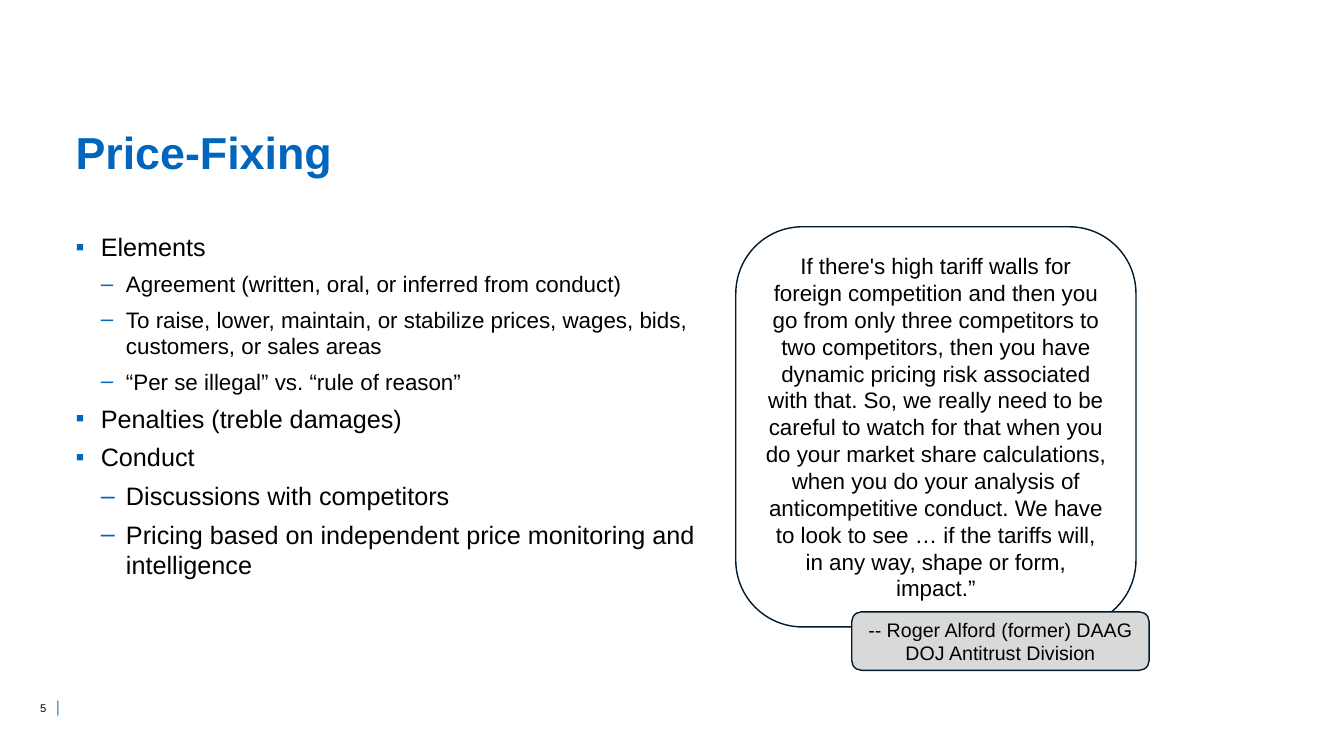
from dataclasses import dataclass

import pptx
import pptx.dml.color
import pptx.enum.shapes
import pptx.enum.text
import pptx.oxml
import pptx.oxml.ns
import pptx.util

Pt = pptx.util.Pt
Anchor = pptx.enum.text.MSO_ANCHOR
Align = pptx.enum.text.PP_ALIGN
Preset = pptx.enum.shapes.MSO_SHAPE

FONT = "Arial"
BLUE, BLACK, NAVY, GREY = "0066BD", "000000", "00192B", "D9D9D9"
INDENT = 18
BULLETS = ("▪", "–")


@dataclass
class Box:
    left: float
    top: float
    width: float
    height: float

    def lengths(self) -> list:
        return [Pt(value) for value in (self.left, self.top, self.width, self.height)]


@dataclass
class Point:
    text: str
    level: int
    size: float


@dataclass
class Callout:
    box: Box
    lines: list[str]
    size: float
    fill: str | None


TITLE_BOX = Box(54, 46.8, 741.6, 84.24)
BODY_BOX = Box(54, 162, 462.24, 311.76)
NUMBER_BOX = Box(11.52, 500.4, 21.6, 10.8)
NUMBER_RULE = Box(41.04, 500.4, 0.72, 10.8)

POINTS = [
    Point("Elements", 0, 18),
    Point("Agreement (written, oral, or inferred from conduct)", 1, 16),
    Point("To raise, lower, maintain, or stabilize prices, wages, bids, "
          "customers, or sales areas", 1, 16),
    Point("“Per se illegal” vs. “rule of reason”", 1, 16),
    Point("Penalties (treble damages)", 0, 18),
    Point("Conduct", 0, 18),
    Point("Discussions with competitors", 1, 18),
    Point("Pricing based on independent price monitoring and intelligence", 1, 18),
]

QUOTE = (
    "If there's high tariff walls for foreign competition and then you go from only "
    "three competitors to two competitors, then you have dynamic pricing risk "
    "associated with that. So, we really need to be careful to watch for that when "
    "you do your market share calculations, when you do your analysis of "
    "anticompetitive conduct. We have to look to see … if the tariffs will, in any "
    "way, shape or form, impact.”"
)
CALLOUTS = [
    Callout(Box(525.6, 162, 285.84, 285.84), [QUOTE], 16, None),
    Callout(Box(608.4, 437.04, 212.4, 41.76),
            ["-- Roger Alford (former) DAAG", "DOJ Antitrust Division"], 14, GREY),
]


def color(value: str) -> pptx.dml.color.RGBColor:
    return pptx.dml.color.RGBColor.from_string(value)


def style(paragraph, size: float, font_color: str, bold: bool = False) -> None:
    paragraph.font.name = FONT
    paragraph.font.size = Pt(size)
    paragraph.font.bold = bold
    paragraph.font.color.rgb = color(font_color)


def add_text_box(slide, box: Box, anchor, inset: float, wrap: bool = True):
    frame = slide.shapes.add_textbox(*box.lengths()).text_frame
    frame.word_wrap = wrap
    frame.vertical_anchor = anchor
    frame.margin_left = frame.margin_right = 0
    frame.margin_top = frame.margin_bottom = Pt(inset)
    return frame


def add_bullet(paragraph, level: int) -> None:
    properties = paragraph._p.get_or_add_pPr()
    properties.set("marL", str(Pt(INDENT * (level + 1))))
    properties.set("indent", str(-Pt(INDENT)))
    namespace = pptx.oxml.ns.nsdecls("a")
    for element in (
        f'<a:buClr {namespace}><a:srgbClr val="{BLUE}"/></a:buClr>',
        f'<a:buFont {namespace} typeface="{FONT}"/>',
        f'<a:buChar {namespace} char="{BULLETS[level]}"/>',
    ):
        properties.append(pptx.oxml.parse_xml(element))


def add_points(slide, box: Box, points: list[Point]) -> None:
    frame = add_text_box(slide, box, Anchor.TOP, 3.6)
    for index, point in enumerate(points):
        paragraph = frame.add_paragraph() if index else frame.paragraphs[0]
        paragraph.text = point.text
        paragraph.level = point.level
        paragraph.space_after = Pt(6)
        add_bullet(paragraph, point.level)
        style(paragraph, point.size, BLACK)


def add_callout(slide, callout: Callout) -> None:
    shape = slide.shapes.add_shape(Preset.ROUNDED_RECTANGLE, *callout.box.lengths())
    shape.shadow.inherit = False
    if callout.fill:
        shape.fill.solid()
        shape.fill.fore_color.rgb = color(callout.fill)
    else:
        shape.fill.background()
    shape.line.color.rgb = color(NAVY)
    shape.line.width = Pt(1)
    frame = shape.text_frame
    frame.word_wrap = True
    frame.vertical_anchor = Anchor.MIDDLE
    for index, line in enumerate(callout.lines):
        paragraph = frame.add_paragraph() if index else frame.paragraphs[0]
        paragraph.text = line
        paragraph.alignment = Align.CENTER
        style(paragraph, callout.size, BLACK)


def main() -> None:
    presentation = pptx.Presentation()
    presentation.slide_width, presentation.slide_height = Pt(960), Pt(540)
    slide = presentation.slides.add_slide(presentation.slide_layouts[6])

    # Slide number and its rule
    rule = slide.shapes.add_shape(Preset.RECTANGLE, *NUMBER_RULE.lengths())
    rule.shadow.inherit = False
    rule.fill.solid()
    rule.fill.fore_color.rgb = color(BLUE)
    rule.line.fill.background()
    number = add_text_box(slide, NUMBER_BOX, Anchor.MIDDLE, 0, wrap=False).paragraphs[0]
    number.text = "5"
    number.alignment = Align.RIGHT
    style(number, 8, BLACK)

    # Title
    title = add_text_box(slide, TITLE_BOX, Anchor.BOTTOM, 3.6).paragraphs[0]
    title.text = "Price-Fixing"
    style(title, 32, BLUE, bold=True)

    # Bulleted points
    add_points(slide, BODY_BOX, POINTS)

    # Quotation and its speaker
    for callout in CALLOUTS:
        add_callout(slide, callout)

    presentation.save("out.pptx")


if __name__ == "__main__":
    main()
